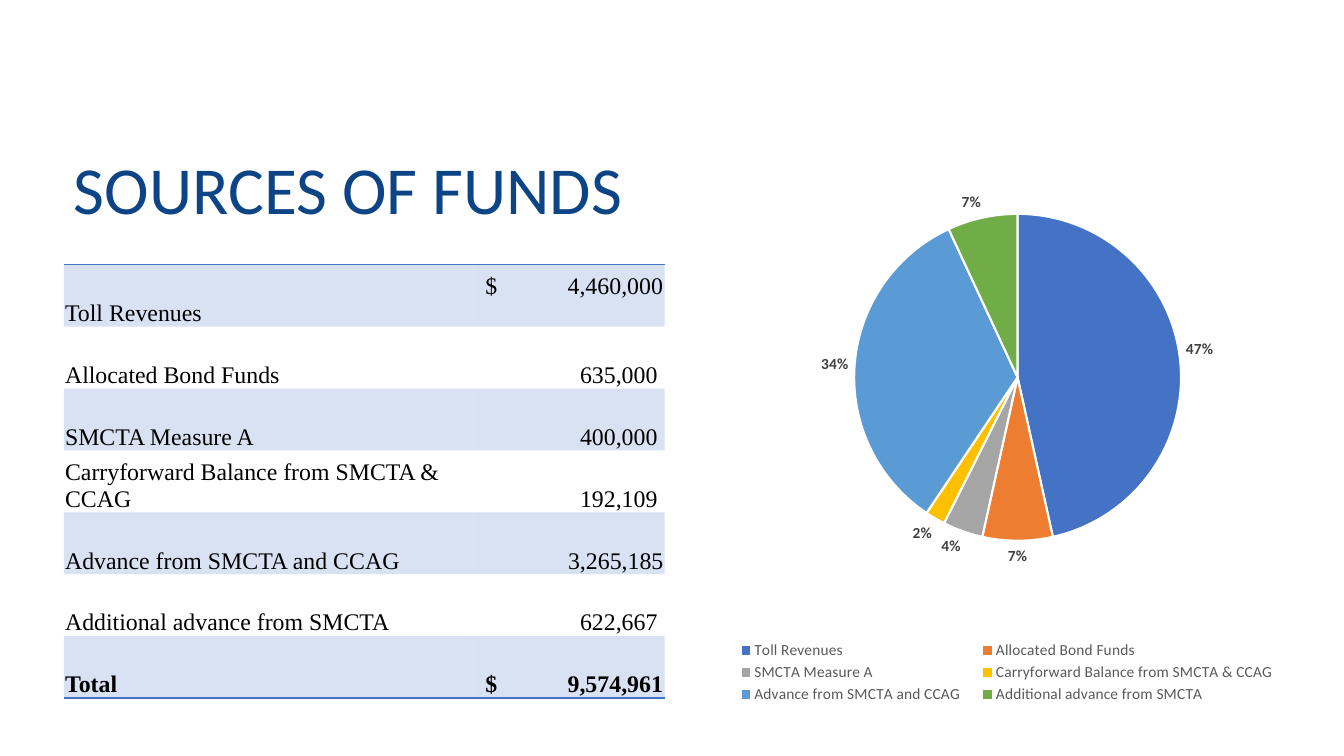
from lxml import etree
from pptx import Presentation
from pptx.chart.data import CategoryChartData
from pptx.dml.color import RGBColor
from pptx.enum.chart import XL_CHART_TYPE as ChartType
from pptx.enum.chart import XL_LABEL_POSITION as LabelPosition
from pptx.enum.chart import XL_LEGEND_POSITION as LegendPosition
from pptx.enum.text import MSO_ANCHOR as Anchor
from pptx.enum.text import MSO_AUTO_SIZE as AutoSize
from pptx.enum.text import PP_ALIGN as Align
from pptx.oxml.ns import qn
from pptx.util import Cm, Pt

FUNDS = [
    ("Toll Revenues", "$\t4,460,000", 47, "4472C4"),
    ("Allocated Bond Funds", "635,000", 7, "ED7D31"),
    ("SMCTA Measure A", "400,000", 4, "A5A5A5"),
    ("Carryforward Balance from SMCTA & CCAG", "192,109", 2, "FFC000"),
    ("Advance from SMCTA and CCAG", "3,265,185", 34, "5B9BD5"),
    ("Additional advance from SMCTA", "622,667", 7, "70AD47"),
]
TOTAL = ("Total", "$\t9,574,961")


def color(value):
    return RGBColor.from_string(value)


def child(parent, tag, **attributes):
    return etree.SubElement(parent, qn(tag), attributes)


class FundsSlide:
    """Holds the slide and its style, and draws each kind of element."""

    sans, serif = "Calibri", "Times New Roman"
    accent = "4472C4"
    inset = Cm(0.03)

    def __init__(self, deck):
        self.slide = deck.slides.add_slide(deck.slide_layouts[5])

    def style(self, font, name, size, hue, bold=False):
        font.name, font.size, font.bold = name, Pt(size), bold
        font.color.rgb = color(hue)

    def title(self, text, left, top, width, height):
        title = self.slide.shapes.title
        title.left, title.top = Cm(left), Cm(top)
        title.width, title.height = Cm(width), Cm(height)
        frame = title.text_frame
        frame.text = text
        frame.auto_size = AutoSize.NONE
        frame.vertical_anchor = Anchor.MIDDLE
        heading = frame.paragraphs[0]
        heading.alignment = Align.LEFT
        heading.line_spacing = 0.9
        self.style(heading.font, self.sans, 48, "0C4485")

    def pie(self, funds, left, top, width, height):
        names, _, shares, hues = zip(*funds)
        data = CategoryChartData()
        data.categories = names
        data.add_series("Series 1", shares)
        chart = self.slide.shapes.add_chart(
            ChartType.PIE, Cm(left), Cm(top), Cm(width), Cm(height), data).chart
        chart.has_title = False
        self.style(chart.font, self.sans, 10, "000000")
        chart.has_legend = True
        chart.legend.position = LegendPosition.BOTTOM
        chart.legend.include_in_layout = False
        self.style(chart.legend.font, self.sans, 11, "595959")

        plot = chart.plots[0]
        plot.vary_by_categories = True
        for index, hue in enumerate(hues):
            part = plot.series[0].points[index].format
            part.fill.solid()
            part.fill.fore_color.rgb = color(hue)
            part.line.color.rgb = color("FFFFFF")
            part.line.width = Pt(1.5)
        plot.has_data_labels = True
        labels = plot.data_labels
        labels.show_value = False
        labels.show_percentage = True
        labels.number_format = "0%"
        labels.number_format_is_linked = False
        labels.position = LabelPosition.OUTSIDE_END
        self.style(labels.font, self.sans, 11, "404040", True)
        self.place(plot._element.getparent(), 0, "inner",
                   x="0.254", y="0.031", w="0.537", h="0.661")
        self.place(chart.legend._element, 1, None,
                   x="0.04", y="0.85", w="0.93", h="0.13")

    def place(self, part, slot, target, **box):
        for old in part.findall(qn("c:layout")):
            part.remove(old)
        layout = child(part, "c:layout")
        part.insert(slot, layout)
        manual = child(layout, "c:manualLayout")
        if target:
            child(manual, "c:layoutTarget", val=target)
        for side in "xy":
            child(manual, f"c:{side}Mode", val="edge")
        for side, share in box.items():
            child(manual, f"c:{side}", val=share)

    def table(self, rows, left, top, widths, row_height):
        table = self.slide.shapes.add_table(
            len(rows), len(widths), Cm(left), Cm(top),
            Cm(sum(widths)), Cm(row_height * len(rows))).table
        table.first_row = table.horz_banding = False
        for column, width in zip(table.columns, widths):
            column.width = Cm(width)
        last = len(rows) - 1
        for index, (name, amount) in enumerate(rows):
            table.rows[index].height = Cm(row_height)
            edges = {0: "T", last: "B"}.get(index, "")
            fund, money = table.cell(index, 0), table.cell(index, 1)
            for cell, text in ((fund, name), (money, amount)):
                self.cell(cell, text, edges, index % 2 == 0, index == last)
            self.align_amount(money, amount)
        table.cell(0, 1).margin_bottom = Cm(0.68)

    def cell(self, cell, text, edges, shaded, bold):
        cell.margin_left = cell.margin_right = cell.margin_top = self.inset
        cell.margin_bottom = 0
        cell.vertical_anchor = Anchor.BOTTOM
        self.borders(cell, edges)
        if shaded:
            cell.fill.solid()
            cell.fill.fore_color.rgb = color(self.accent)
            hue = cell._tc.tcPr.find(qn("a:solidFill"))[0]
            child(hue, "a:alpha", val="20000")
        else:
            cell.fill.background()
        cell.text = text
        paragraph = cell.text_frame.paragraphs[0]
        if "\t" in text:
            tabs = child(paragraph._p.get_or_add_pPr(), "a:tabLst")
            child(tabs, "a:tab", pos=str(Cm(4.48)), algn="r")
        self.style(paragraph.font, self.serif, 17, "000000", bold)

    def borders(self, cell, edges):
        for side in "LRTB":
            line = child(cell._tc.get_or_add_tcPr(), f"a:ln{side}", w=str(Pt(1)))
            if side in edges:
                child(child(line, "a:solidFill"), "a:srgbClr", val=self.accent)
            else:
                child(line, "a:noFill")

    def align_amount(self, cell, amount):
        if "\t" in amount:
            cell.margin_left = Cm(0.18)
            return
        cell.text_frame.paragraphs[0].alignment = Align.RIGHT
        if len(amount) < 9:
            cell.margin_right = Cm(0.18)


def main():
    deck = Presentation()
    deck.slide_width, deck.slide_height = Cm(33.87), Cm(19.05)
    page = FundsSlide(deck)
    page.title("SOURCES OF FUNDS", 1.61, 3.82, 29.21, 2.06)
    page.pie(FUNDS, 17.63, 4.65, 15.34, 13.44)
    rows = [fund[:2] for fund in FUNDS] + [TOTAL]
    page.table(rows, 1.61, 6.67, (10.44, 4.7), 1.56)
    deck.save("out.pptx")


if __name__ == "__main__":
    main()
